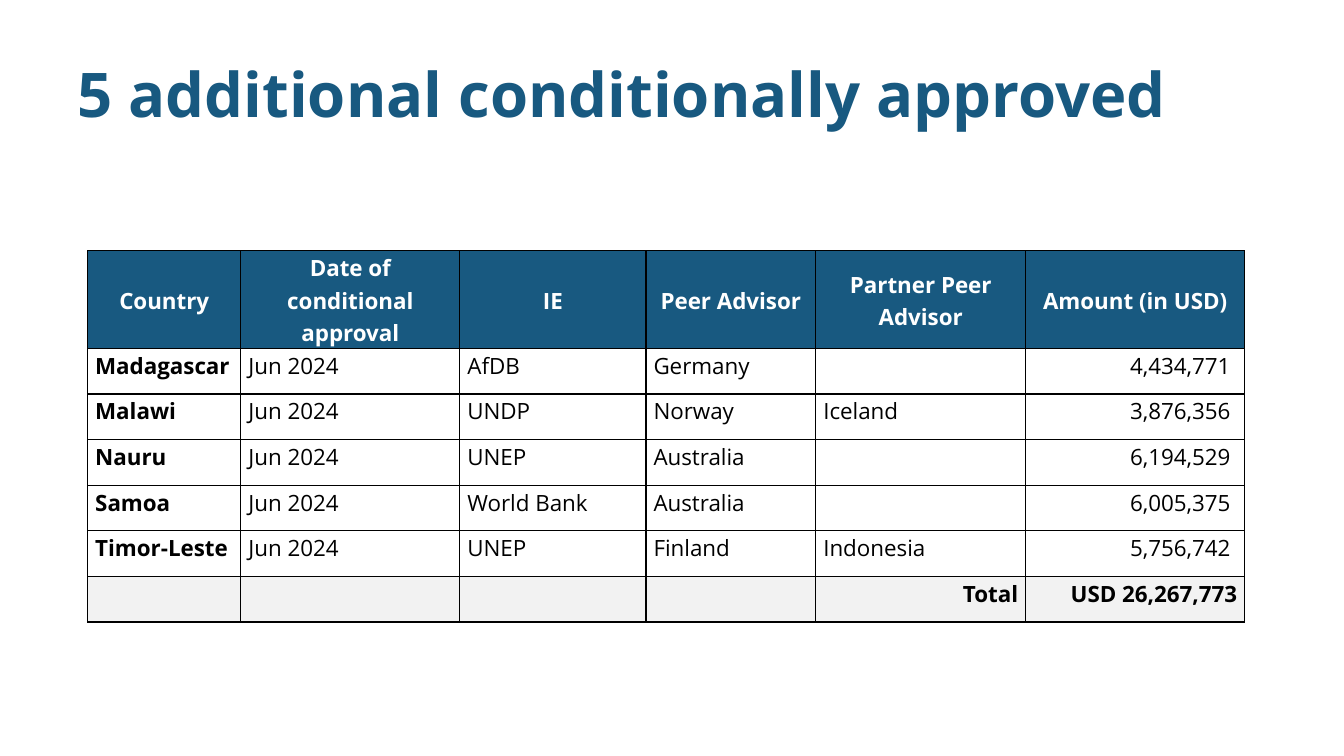
"""Build the slide listing five conditionally approved countries and their amounts."""
from dataclasses import dataclass

from lxml import etree
from pptx import Presentation
from pptx import util as u
from pptx.dml.color import RGBColor
from pptx.enum import text
from pptx.oxml.ns import qn


@dataclass(frozen=True)
class Theme:
    font: str = "Open Sans"
    blue: str = "185980"
    white: str = "FFFFFF"
    black: str = "000000"
    grey: str = "F2F2F2"
    title_size: int = 44
    table_size: int = 16


theme = Theme()
LEFT, CENTER, RIGHT = text.PP_ALIGN.LEFT, text.PP_ALIGN.CENTER, text.PP_ALIGN.RIGHT


def write(tf, content, size=theme.table_size, color=theme.black, bold=False,
          align=LEFT, spacing=1.07, gap=3):
    p = tf.paragraphs[0]
    p.alignment = align
    p.line_spacing = spacing
    p.space_before = p.space_after = u.Pt(gap)
    r = p.add_run()
    r.text = content
    r.font.name = theme.font
    r.font.size = u.Pt(size)
    r.font.bold = bold
    r.font.color.rgb = RGBColor.from_string(color)


def add_borders(cell):
    tc_pr = cell._tc.get_or_add_tcPr()
    for side in ("a:lnL", "a:lnR", "a:lnT", "a:lnB"):
        ln = etree.SubElement(tc_pr, qn(side), w=str(u.Pt(1)))
        fill = etree.SubElement(ln, qn("a:solidFill"))
        etree.SubElement(fill, qn("a:srgbClr"), val=theme.black)


prs = Presentation()
prs.slide_width, prs.slide_height = u.Cm(33.87), u.Cm(19.05)
s = prs.slides.add_slide(prs.slide_layouts[5])

title = s.shapes.title
title.left, title.top, title.width, title.height = u.Cm(1.7), u.Cm(0.76), u.Cm(30.48), u.Cm(3.18)
title.text_frame.auto_size = text.MSO_AUTO_SIZE.NONE
title.text_frame.vertical_anchor = text.MSO_ANCHOR.MIDDLE
write(title.text_frame, "5 additional conditionally approved", size=theme.title_size,
      color=theme.blue, bold=True, spacing=1.0, gap=0)

rows = [
    ("Country", "Date of conditional approval", "IE", "Peer Advisor",
     "Partner Peer Advisor", "Amount (in USD)"),
    ("Madagascar", "Jun 2024", "AfDB", "Germany", "", "4,434,771"),
    ("Malawi", "Jun 2024", "UNDP", "Norway", "Iceland", "3,876,356"),
    ("Nauru", "Jun 2024", "UNEP", "Australia", "", "6,194,529"),
    ("Samoa", "Jun 2024", "World Bank", "Australia", "", "6,005,375"),
    ("Timor-Leste", "Jun 2024", "UNEP", "Finland", "Indonesia", "5,756,742"),
    ("", "", "", "", "Total", "USD 26,267,773"),
]
widths = [3.86, 5.52, 4.69, 4.28, 5.29, 5.52]
heights = [1.8] + [1.15] * (len(rows) - 1)
total_row, amount_col = len(rows) - 1, len(widths) - 1

table = s.shapes.add_table(len(rows), len(widths), u.Cm(2.21), u.Cm(6.32),
                           u.Cm(sum(widths)), u.Cm(sum(heights))).table
for column, width in zip(table.columns, widths):
    column.width = u.Cm(width)

for i, values in enumerate(rows):
    table.rows[i].height = u.Cm(heights[i])
    header, total = i == 0, i == total_row
    for j, value in enumerate(values):
        cell = table.cell(i, j)
        add_borders(cell)
        cell.fill.solid()
        cell.fill.fore_color.rgb = RGBColor.from_string(
            theme.blue if header else theme.grey if total else theme.white)
        amount = j == amount_col and not (header or total)
        cell.margin_left = u.Cm(0.19)
        cell.margin_right = u.Cm(0.36 if amount else 0.19)
        cell.margin_top = cell.margin_bottom = 0
        cell.vertical_anchor = text.MSO_ANCHOR.MIDDLE if header else text.MSO_ANCHOR.TOP
        if value:
            write(cell.text_frame, value, bold=header or total or j == 0,
                  color=theme.white if header else theme.black,
                  align=CENTER if header else RIGHT if total or amount else LEFT)

prs.save("out.pptx")
